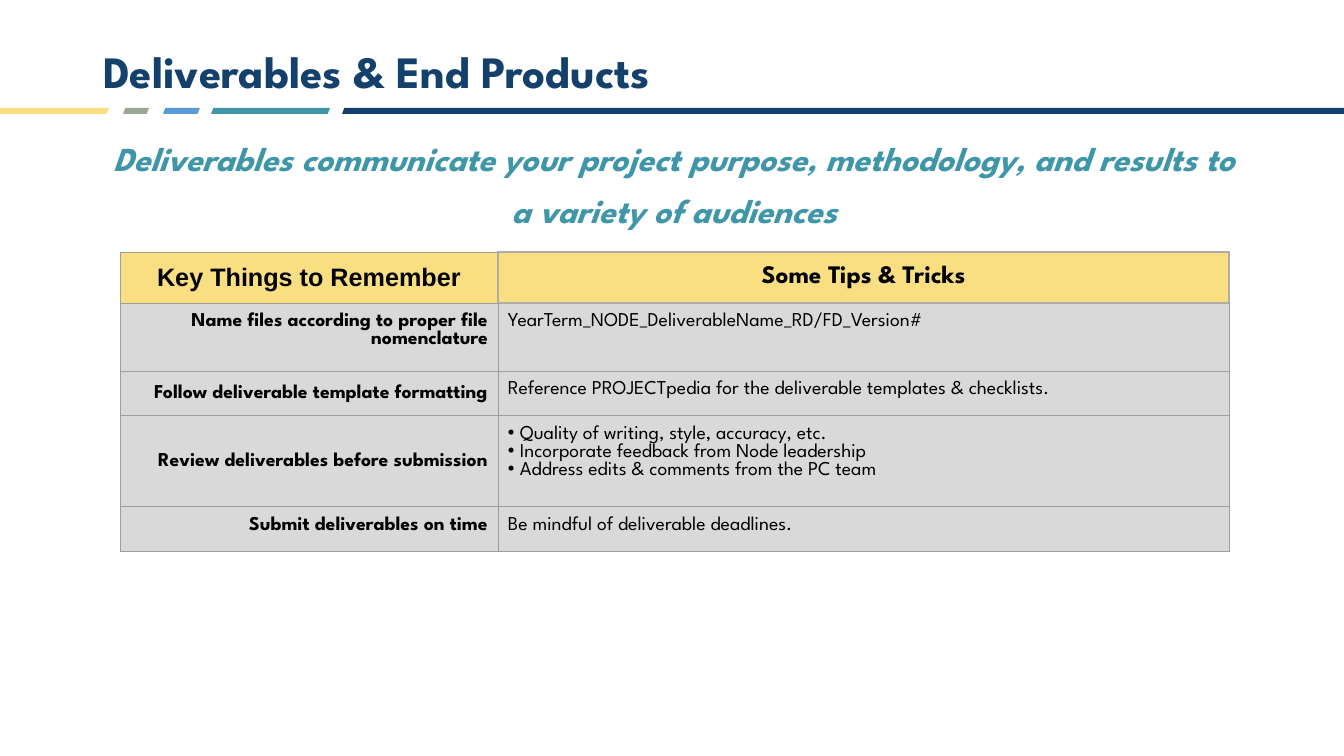
from lxml import etree
from pptx import Presentation
from pptx.dml.color import RGBColor
from pptx.enum import shapes, text
from pptx.oxml.ns import qn
from pptx.util import Emu, Pt

PX = 914400 / 100.8
FACE = "League Spartan"
ALIGN = text.PP_ALIGN
ANCHOR = text.MSO_ANCHOR


def px(*vals):
    return [Emu(round(v * PX)) for v in vals]


def style(para, size, color, bold=True, face=FACE):
    font = para.font
    font.name, font.size, font.bold = face, Pt(size), bold
    font.color.rgb = RGBColor.from_string(color)


prs = Presentation()
prs.slide_width, prs.slide_height = px(1344, 756)
slide = prs.slides.add_slide(prs.slide_layouts[5])

# Coloured rule under the title
for left, width, color in [
    (-4, 113, "FADF82"), (123, 26, "99A893"), (163, 37, "5B9BD5"),
    (211, 119, "3E96A8"), (342, 1006, "13416C"),
]:
    bar = slide.shapes.add_shape(
        shapes.MSO_SHAPE.PARALLELOGRAM, *px(left, 108, width, 6))
    bar.adjustments[0] = 0.4
    bar.shadow.inherit = False
    bar.fill.solid()
    bar.fill.fore_color.rgb = RGBColor.from_string(color)
    bar.line.fill.background()

# Title
title = slide.shapes.title
title.left, title.top, title.width, title.height = px(93, 40, 1159, 68)
frame = title.text_frame
frame.text = "Deliverables & End Products"
frame.vertical_anchor = ANCHOR.MIDDLE
para = frame.paragraphs[0]
para.alignment, para.line_spacing = ALIGN.LEFT, 0.9
style(para, 32, "13416C")

# Subtitle
frame = slide.shapes.add_textbox(*px(97, 121, 1154, 92)).text_frame
frame.word_wrap = True
frame.text = ("Deliverables communicate your project purpose, methodology, "
              "and results to a variety of audiences")
para = frame.paragraphs[0]
para.alignment, para.line_spacing = ALIGN.CENTER, 1.3
style(para, 24, "3E96A8")
para.font.italic = True

# Table: height, label, label anchor, tips
rows = [
    (51, "Key Things to Remember", ANCHOR.MIDDLE, ["Some Tips & Tricks"]),
    (68, "Name files according to proper file nomenclature", ANCHOR.TOP,
     ["YearTerm_NODE_DeliverableName_RD/FD_Version#"]),
    (45, "Follow deliverable template formatting", ANCHOR.MIDDLE,
     ["Reference PROJECTpedia for the deliverable templates & checklists."]),
    (91, "Review deliverables before submission", ANCHOR.MIDDLE,
     ["Quality of writing, style, accuracy, etc.",
      "Incorporate feedback from Node leadership",
      "Address edits & comments from the PC team"]),
    (45, "Submit deliverables on time", ANCHOR.TOP,
     ["Be mindful of deliverable deadlines."]),
]
high = sum(row[0] for row in rows)
table = slide.shapes.add_table(len(rows), 2, *px(120, 252, 1109, high)).table
table.first_row = table.horz_banding = False
table.columns[0].width, table.columns[1].width = px(378, 731)

for r, (height, label, anchor, tips) in enumerate(rows):
    table.rows[r].height = px(height)[0]
    head = r == 0
    for c, lines in enumerate([[label], tips]):
        cell = table.cell(r, c)
        cell.margin_left, cell.margin_top = px(10, 10)
        cell.margin_right, cell.margin_bottom = px(10, 10)
        cell.vertical_anchor = anchor if head or c == 0 else ANCHOR.TOP

        # Borders, with a heavier one around the second heading
        props = cell._tc.get_or_add_tcPr()
        for side in "LRTB":
            heavy = head and (c == 1 or side == "R")
            width, color = (1, "AFABAB") if heavy else (0.75, "9E9E9E")
            line = etree.SubElement(props, qn("a:ln" + side), w=str(Pt(width)))
            fill = etree.SubElement(line, qn("a:solidFill"))
            etree.SubElement(fill, qn("a:srgbClr"), val=color)
        cell.fill.solid()
        cell.fill.fore_color.rgb = RGBColor.from_string(
            "FADF82" if head else "D9D9D9")

        # Text
        cell.text = "\n".join(lines)
        for para in cell.text_frame.paragraphs:
            if len(lines) > 1:
                props = para._p.get_or_add_pPr()
                step = px(12)[0]
                props.set("marL", str(step))
                props.set("indent", str(-step))
                etree.SubElement(props, qn("a:buChar"), char="•")
            para.alignment = (ALIGN.CENTER if head else
                              ALIGN.LEFT if c else ALIGN.RIGHT)
            style(para, 18 if head else 14, "000000", head or c == 0,
                  "Arial" if head and c == 0 else FACE)

prs.save("out.pptx")
